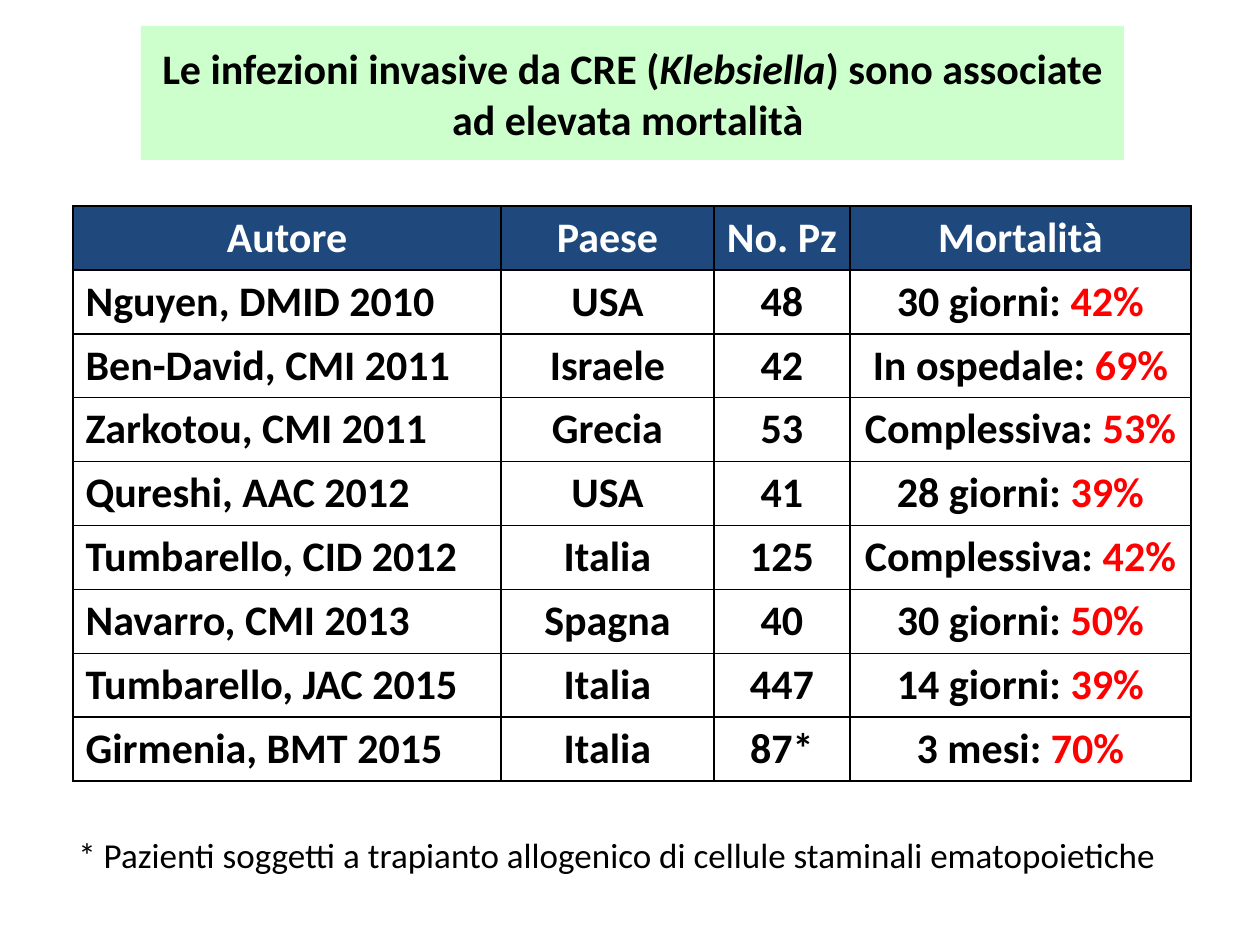
from lxml.etree import SubElement
from pptx import Presentation
from pptx.dml.color import RGBColor
from pptx.enum.shapes import MSO_SHAPE
from pptx.enum.text import MSO_ANCHOR, MSO_AUTO_SIZE, PP_ALIGN
from pptx.oxml.ns import qn
from pptx.util import Emu, Pt

SCALE = 914400 / 126
BLACK, WHITE, RED, NAVY, MINT = "000000", "FFFFFF", "FF0000", "1F497D", "CCFFCC"
BOLD = {"name": "Calibri", "size": Pt(24), "bold": True}
NOTE = {"name": "Calibri", "size": Pt(20), "bold": False}
COLUMN_WIDTHS = (428, 213, 136, 341)
ROW_HEIGHT = 63
HEADINGS = ("Autore", "Paese", "No. Pz", "Mortalità")
STUDIES = (
    ("Nguyen, DMID 2010", "USA", "48", "30 giorni: ", "42%"),
    ("Ben-David, CMI 2011", "Israele", "42", "In ospedale: ", "69%"),
    ("Zarkotou, CMI 2011", "Grecia", "53", "Complessiva: ", "53%"),
    ("Qureshi, AAC 2012", "USA", "41", "28 giorni: ", "39%"),
    ("Tumbarello, CID 2012", "Italia", "125", "Complessiva: ", "42%"),
    ("Navarro, CMI 2013", "Spagna", "40", "30 giorni: ", "50%"),
    ("Tumbarello, JAC 2015", "Italia", "447", "14 giorni: ", "39%"),
    ("Girmenia, BMT 2015", "Italia", "87*", "3 mesi: ", "70%"),
)


def px(length):
    """Turn a length in px into EMU."""
    return Emu(round(length * SCALE))


def color(value):
    """Turn a hex string into a colour."""
    return RGBColor.from_string(value)


def add_run(paragraph, text, style, ink=BLACK):
    """Append text in the given style and colour."""
    run = paragraph.add_run()
    run.text = text
    for attribute, value in style.items():
        setattr(run.font, attribute, value)
    run.font.color.rgb = color(ink)


def add_title(slide):
    """Add the title on its green band."""
    title = slide.shapes.add_shape(MSO_SHAPE.RECTANGLE, px(141), px(26), px(983), px(134))
    title.shadow.inherit = False
    title.fill.solid()
    title.fill.fore_color.rgb = color(MINT)
    title.line.fill.background()
    frame = title.text_frame
    layout = {"word_wrap": True, "vertical_anchor": MSO_ANCHOR.MIDDLE,
              "margin_left": px(9), "margin_right": px(9),
              "margin_top": px(5), "margin_bottom": px(5)}
    for attribute, value in layout.items():
        setattr(frame, attribute, value)
    sentence = frame.paragraphs[0]
    sentence.alignment = PP_ALIGN.CENTER
    add_run(sentence, "Le infezioni invasive da CRE (", BOLD)
    add_run(sentence, "Klebsiella", BOLD | {"italic": True})
    add_run(sentence, ") sono associate ad elevata mortalità ", BOLD)


def add_borders(cell):
    """Draw a thin black line on every side of a cell."""
    properties = cell._tc.get_or_add_tcPr()
    for side in ("a:lnL", "a:lnR", "a:lnT", "a:lnB"):
        border = SubElement(properties, qn(side), w=str(Pt(1)))
        SubElement(SubElement(border, qn("a:solidFill")), qn("a:srgbClr"), val=BLACK)


def fill_cell(cell, runs, alignment, fill=None):
    """Write coloured runs into a bordered cell."""
    add_borders(cell)
    if fill:
        cell.fill.solid()
        cell.fill.fore_color.rgb = color(fill)
    else:
        cell.fill.background()
    cell.vertical_anchor = MSO_ANCHOR.MIDDLE
    content = cell.text_frame.paragraphs[0]
    content.alignment = alignment
    for text, ink in runs:
        add_run(content, text, BOLD, ink)


def add_studies(slide):
    """Add the table of studies and their mortality."""
    row_count = len(STUDIES) + 1
    table = slide.shapes.add_table(
        row_count, len(HEADINGS), px(73), px(206),
        px(sum(COLUMN_WIDTHS)), px(ROW_HEIGHT * row_count)).table
    for column, width in zip(table.columns, COLUMN_WIDTHS):
        column.width = px(width)
    for row in table.rows:
        row.height = px(ROW_HEIGHT)
    for column, heading in enumerate(HEADINGS):
        fill_cell(table.cell(0, column), [(heading, WHITE)], PP_ALIGN.CENTER, NAVY)
    for row, (author, country, patients, period, rate) in enumerate(STUDIES, 1):
        entries = ([(author, BLACK)], [(country, BLACK)], [(patients, BLACK)],
                   [(period, BLACK), (rate, RED)])
        for column, runs in enumerate(entries):
            alignment = PP_ALIGN.CENTER if column else PP_ALIGN.LEFT
            fill_cell(table.cell(row, column), runs, alignment)


def add_footnote(slide):
    """Add the note on the starred patients."""
    frame = slide.shapes.add_textbox(px(66), px(827), px(1115), px(55)).text_frame
    frame.word_wrap = False
    frame.auto_size = MSO_AUTO_SIZE.SHAPE_TO_FIT_TEXT
    add_run(frame.paragraphs[0],
            "* Pazienti soggetti a trapianto allogenico di cellule staminali ematopoietiche",
            NOTE)


def main():
    """Build and save the slide."""
    presentation = Presentation()
    presentation.slide_width, presentation.slide_height = px(1260), px(945)
    slide = presentation.slides.add_slide(presentation.slide_layouts[6])
    add_title(slide)
    add_studies(slide)
    add_footnote(slide)
    presentation.save("out.pptx")


if __name__ == "__main__":
    main()
